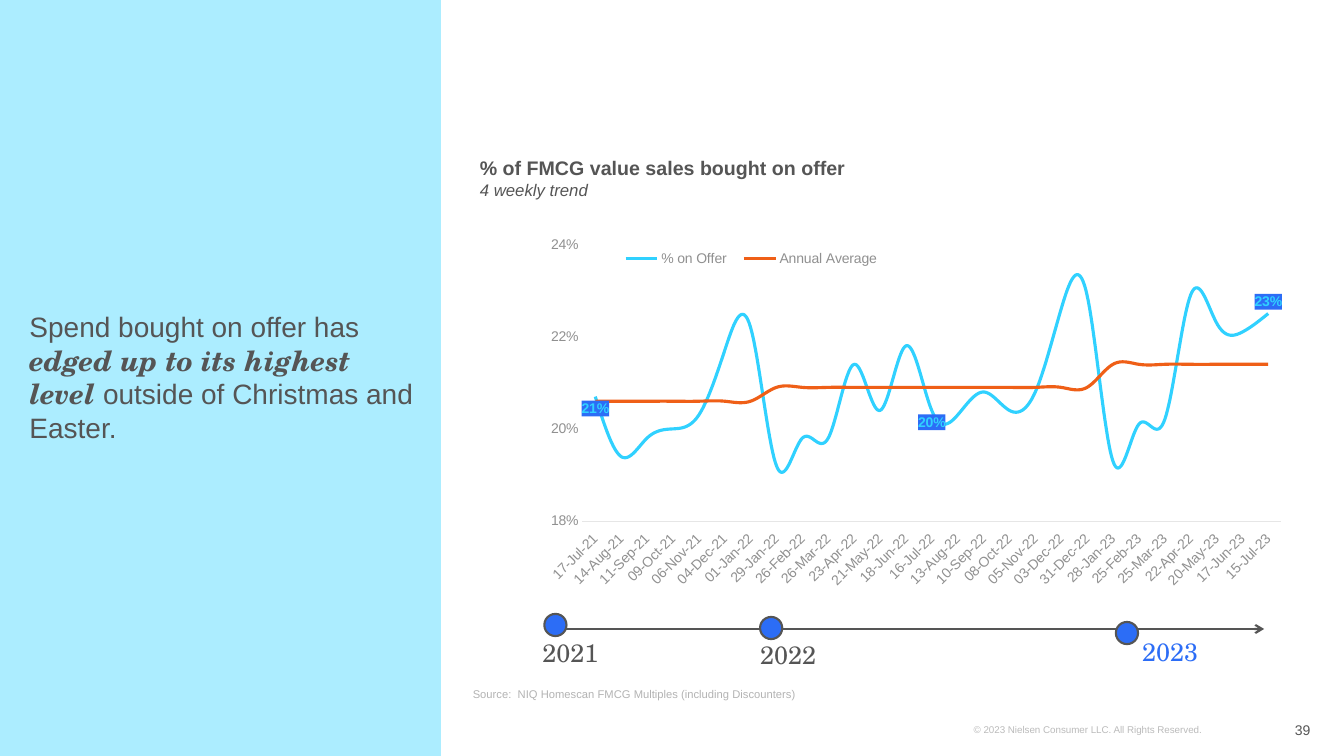
from dataclasses import dataclass

from lxml.etree import SubElement
from pptx import Presentation
from pptx.chart.data import CategoryChartData
from pptx.dml.color import RGBColor
from pptx.enum.chart import XL_CHART_TYPE, XL_LABEL_POSITION, XL_LEGEND_POSITION
from pptx.enum.chart import XL_TICK_LABEL_POSITION, XL_TICK_MARK
from pptx.enum.shapes import MSO_CONNECTOR, MSO_SHAPE
from pptx.enum.text import MSO_ANCHOR, PP_ALIGN
from pptx.oxml import parse_xml
from pptx.oxml.ns import nsdecls, qn
from pptx.util import Inches, Pt

COLUMNS, ROWS, CELL = 160, 90, 1 / 12


@dataclass(frozen=True)
class Theme:
    """Colours, fonts and type sizes of the slide."""
    panel: str = "ACEDFF"
    ink: str = "555555"
    accent: str = "2C6DF6"
    offer: str = "30D1FF"
    average: str = "EF5F17"
    axis_text: str = "909090"
    axis_line: str = "E6E6E6"
    source_text: str = "B3B3B3"
    copyright_text: str = "BBBBBB"
    sans: str = "Arial"
    serif: str = "TeX Gyre Schola"
    message: int = 20
    year: int = 18
    heading: int = 14
    subheading: int = 12
    small: int = 10
    source: int = 8
    copyright: int = 7


@dataclass(frozen=True)
class Box:
    """A rectangle measured in grid columns and rows."""
    x: float
    y: float
    w: float
    h: float

    def inner(self, x, y, w, h):
        """Return a box placed relative to this one."""
        return Box(self.x + x, self.y + y, w, h)

    def emu(self):
        """Return left, top, width and height as lengths."""
        return [Inches(cells * CELL) for cells in (self.x, self.y, self.w, self.h)]


THEME = Theme()
DATES = """17-Jul-21 14-Aug-21 11-Sep-21 09-Oct-21 06-Nov-21 04-Dec-21 01-Jan-22
29-Jan-22 26-Feb-22 26-Mar-22 23-Apr-22 21-May-22 18-Jun-22 16-Jul-22 13-Aug-22
10-Sep-22 08-Oct-22 05-Nov-22 03-Dec-22 31-Dec-22 28-Jan-23 25-Feb-23 25-Mar-23
22-Apr-22 20-May-23 17-Jun-23 15-Jul-23""".split()
ON_OFFER = [0.207, 0.194, 0.198, 0.2, 0.203, 0.217, 0.222, 0.192, 0.198,
            0.198, 0.214, 0.204, 0.218, 0.204, 0.203, 0.208, 0.204, 0.208,
            0.226, 0.229, 0.193, 0.201, 0.202, 0.229, 0.223, 0.221, 0.225]
ANNUAL_AVERAGE = [0.206] * 7 + [0.209] * 13 + [0.214] * 7


def style_font(font, size, color, name=THEME.sans, bold=False, italic=False):
    """Apply size, colour, typeface and emphasis."""
    font.size, font.name, font.bold, font.italic = Pt(size), name, bold, italic
    font.color.rgb = RGBColor.from_string(color)


def add_text(slide, box, paragraphs, anchor=MSO_ANCHOR.MIDDLE):
    """Write paragraphs, each a list of (text, font settings) runs."""
    frame = slide.shapes.add_textbox(*box.emu()).text_frame
    frame.word_wrap, frame.vertical_anchor = True, anchor
    frame.margin_left = frame.margin_right = 0
    for index, runs in enumerate(paragraphs):
        paragraph = frame.add_paragraph() if index else frame.paragraphs[0]
        for text, settings in runs:
            run = paragraph.add_run()
            run.text = text
            style_font(run.font, **settings)
    return frame


def add_message_panel(slide, box):
    """Draw the coloured panel with the key message."""
    panel = slide.shapes.add_shape(MSO_SHAPE.RECTANGLE, *box.emu())
    panel.shadow.inherit = False
    panel.fill.solid()
    panel.fill.fore_color.rgb = RGBColor.from_string(THEME.panel)
    panel.line.fill.background()
    plain = dict(size=THEME.message, color=THEME.ink)
    strong = dict(plain, name=THEME.serif, bold=True, italic=True)
    add_text(slide, box.inner(3.5, 29.2, 46, 31.3), [[
        ("Spend bought on offer has ", plain),
        ("edged up to its highest level ", strong),
        ("outside of Christmas and Easter.", plain)]])


def add_heading(slide, box):
    """Write the chart heading and its subheading."""
    add_text(slide, box, [
        [("% of FMCG value sales bought on offer",
          dict(size=THEME.heading, color=THEME.ink, bold=True))],
        [("4 weekly trend",
          dict(size=THEME.subheading, color=THEME.ink, italic=True))]])


def set_layout(element, x, y, w, h, inner=False):
    """Place a chart region by shares of the chart's size."""
    for old in element.findall(qn("c:layout")):
        element.remove(old)
    layout = parse_xml(f"<c:layout {nsdecls('c')}><c:manualLayout/></c:layout>")
    settings = [("layoutTarget", "inner")] if inner else []
    settings += [("xMode", "edge"), ("yMode", "edge"),
                 ("x", x), ("y", y), ("w", w), ("h", h)]
    for tag, value in settings:
        SubElement(layout[0], qn(f"c:{tag}")).set("val", str(value))
    element.insert(0 if inner else 1, layout)


def style_axes(chart):
    """Format the date axis and the percentage axis."""
    dates, percent = chart.category_axis, chart.value_axis
    for axis in (dates, percent):
        axis.has_major_gridlines = False
        axis.major_tick_mark = axis.minor_tick_mark = XL_TICK_MARK.NONE
        style_font(axis.tick_labels.font, THEME.small, THEME.axis_text)
    dates.tick_label_position = XL_TICK_LABEL_POSITION.LOW
    dates.format.line.color.rgb = RGBColor.from_string(THEME.axis_line)
    dates.format.line.width = Pt(0.75)
    dates._element.find(qn("c:txPr")).find(qn("a:bodyPr")).set("rot", "-2700000")
    percent.minimum_scale, percent.maximum_scale, percent.major_unit = 0.18, 0.24, 0.02
    percent.tick_labels.number_format = "0%"
    percent.tick_labels.number_format_is_linked = False
    percent.format.line.fill.background()


def label_point(series, index, position):
    """Show one highlighted value label."""
    label = series.points[index].data_label
    style_font(label.font, THEME.small, THEME.offer, bold=True)
    label.position = position
    text_style = label._dLbl.find(qn("c:txPr"))
    text_style.addprevious(parse_xml(
        f"<c:spPr {nsdecls('c', 'a')}><a:solidFill>"
        f'<a:srgbClr val="{THEME.accent}"/></a:solidFill></c:spPr>'))


def add_trend_chart(slide, box):
    """Draw the share on offer against its annual average."""
    data = CategoryChartData(number_format="0%")
    data.categories = DATES
    data.add_series("% on Offer", ON_OFFER)
    data.add_series("Annual Average", ANNUAL_AVERAGE)
    chart = slide.shapes.add_chart(XL_CHART_TYPE.LINE, *box.emu(), data).chart
    chart.has_title = False
    style_font(chart.font, THEME.small, THEME.ink)
    style_axes(chart)
    plot = chart.plots[0]
    plot.vary_by_categories = False
    for series, color in zip(plot.series, (THEME.offer, THEME.average)):
        series.smooth = True
        series.format.line.color.rgb = RGBColor.from_string(color)
        series.format.line.width = Pt(2.25)
    on_offer = plot.series[0]
    on_offer.data_labels.show_value = False
    for index, position in ((0, XL_LABEL_POSITION.BELOW),
                            (13, XL_LABEL_POSITION.BELOW),
                            (26, XL_LABEL_POSITION.ABOVE)):
        label_point(on_offer, index, position)
    chart.has_legend = True
    chart.legend.position = XL_LEGEND_POSITION.BOTTOM
    chart.legend.include_in_layout = False
    style_font(chart.legend.font, THEME.small, THEME.axis_text)
    set_layout(chart.legend._element, 0.1, 0.11, 0.36, 0.07)
    set_layout(plot._element.getparent(), 0.06, 0.11, 0.91, 0.68, inner=True)


def add_timeline(slide, box):
    """Draw the arrow with a dot and a label for each year."""
    left, top, width, _ = box.inner(1.4, 2.88, 84.6, 0).emu()
    arrow = slide.shapes.add_connector(
        MSO_CONNECTOR.STRAIGHT, left, top, left + width, top)
    arrow.line.color.rgb = RGBColor.from_string(THEME.ink)
    arrow.line.width = Pt(1.5)
    SubElement(arrow.line._get_or_add_ln(), qn("a:tailEnd")).set("type", "arrow")
    SubElement(arrow._element.spPr, qn("a:effectLst"))
    size = 2.64
    for year, dot_x, dot_y, label_x, label_y, color in (
            ("2021", 0.3, 1.08, 0.06, 2.28, THEME.ink),
            ("2022", 25.98, 1.44, 25.98, 2.52, THEME.ink),
            ("2023", 68.34, 2.04, 71.46, 2.16, THEME.accent)):
        dot = slide.shapes.add_shape(
            MSO_SHAPE.OVAL, *box.inner(dot_x, dot_y, size, size).emu())
        dot.shadow.inherit = False
        dot.fill.solid()
        dot.fill.fore_color.rgb = RGBColor.from_string(THEME.accent)
        dot.line.color.rgb = RGBColor.from_string(THEME.ink)
        dot.line.width = Pt(1.5)
        label = add_text(slide, box.inner(label_x, label_y, 9, 5.76), [[
            (year, dict(size=THEME.year, color=color, name=THEME.serif))]],
            MSO_ANCHOR.BOTTOM)
        label.paragraphs[0].space_after = Pt(6)


def add_footer(slide, box):
    """Write the source, the copyright line and the page number."""
    add_text(slide, box.inner(0, 0, 99.72, 4.8), [[
        ("Source:  NIQ Homescan FMCG Multiples (including Discounters)",
         dict(size=THEME.source, color=THEME.source_text))]], MSO_ANCHOR.BOTTOM)
    add_text(slide, box.inner(59.64, 6.36, 34.08, 2.64), [[
        ("© 2023 Nielsen Consumer LLC. All Rights Reserved.",
         dict(size=THEME.copyright, color=THEME.copyright_text))]], MSO_ANCHOR.TOP)
    page = add_text(slide, box.inner(87.84, 5.28, 11.88, 4.8), [[
        ("39", dict(size=THEME.small, color=THEME.ink))]])
    page.paragraphs[0].alignment = PP_ALIGN.RIGHT


def main():
    """Build and save the slide."""
    deck = Presentation()
    deck.slide_width, deck.slide_height = Inches(COLUMNS * CELL), Inches(ROWS * CELL)
    slide = deck.slides.add_slide(deck.slide_layouts[6])
    add_message_panel(slide, Box(0, 0, 52.5, ROWS))
    add_heading(slide, Box(57.12, 17.76, 99.84, 6.84))
    add_trend_chart(slide, Box(63.84, 23.76, 91.44, 48.48))
    add_timeline(slide, Box(64.5, 72, 86.5, 9))
    add_footer(slide, Box(56.28, 79.2, 99.72, 10.08))
    deck.save("out.pptx")


if __name__ == "__main__":
    main()
